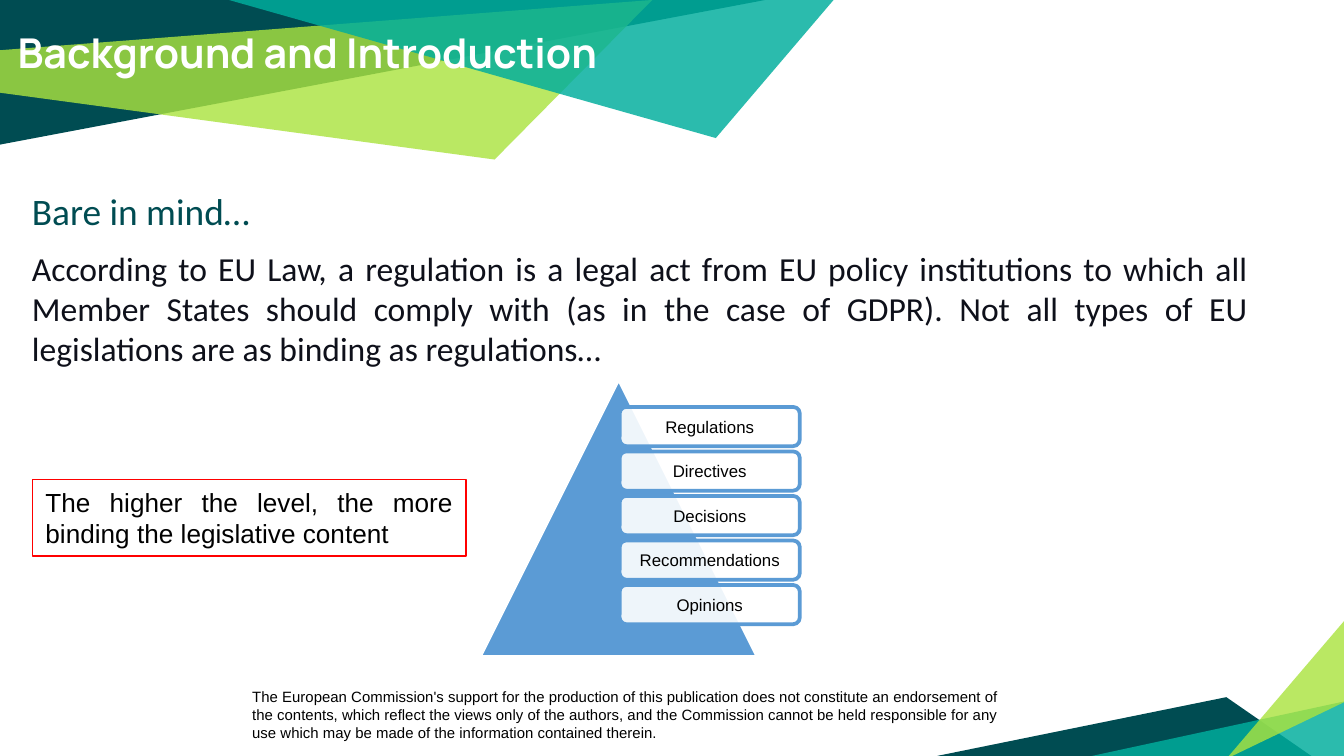
from lxml.etree import SubElement
from pptx import Presentation
from pptx.dml.color import RGBColor
from pptx.enum.shapes import MSO_SHAPE
from pptx.enum.text import MSO_ANCHOR, MSO_AUTO_SIZE, PP_ALIGN
from pptx.oxml.ns import qn
from pptx.util import Pt

COLORS = {
    "white": "FFFFFF",
    "black": "000000",
    "ink": "0E101A",
    "petrol": "004C52",
    "lime": "ABE33F",
    "teal": "00AE9D",
    "blue": "5B9BD5",
    "red": "FF0000",
}


def color(name):
    return RGBColor.from_string(COLORS[name])


class SlideBuilder:
    def __init__(self, slide):
        self.slide = slide
        self.shapes = slide.shapes

    def paint(self, shape, fill=None, opacity=100, line=None, line_width=2):
        shape.shadow.inherit = False
        if fill:
            shape.fill.solid()
            shape.fill.fore_color.rgb = color(fill)
            if opacity < 100:
                solid = shape.element.spPr.find(qn("a:solidFill"))
                SubElement(solid[0], qn("a:alpha"), val=str(opacity * 1000))
        else:
            shape.fill.background()
        if line:
            shape.line.color.rgb = color(line)
            shape.line.width = Pt(line_width)
        else:
            shape.line.fill.background()

    def set_text(self, shape, text, size, font, ink, align=PP_ALIGN.LEFT,
                 anchor=MSO_ANCHOR.TOP, margins=(7.2, 3.6), bold=False):
        frame = shape.text_frame
        frame.text = text
        frame.word_wrap = True
        frame.auto_size = MSO_AUTO_SIZE.NONE
        frame.vertical_anchor = anchor
        frame.margin_left = frame.margin_right = Pt(margins[0])
        frame.margin_top = frame.margin_bottom = Pt(margins[1])
        paragraph = frame.paragraphs[0]
        paragraph.alignment = align
        for run in paragraph.runs:
            run.font.size = Pt(size)
            run.font.name = font
            run.font.bold = bold
            run.font.color.rgb = color(ink)

    def title(self, text, box):
        title = self.shapes.title
        title.left, title.top, title.width, title.height = map(Pt, box)
        self.set_text(title, text, 22, "Manrope", "white",
                      anchor=MSO_ANCHOR.MIDDLE, margins=(7.2, 7.2), bold=True)
        title.element.getparent().append(title.element)

    def text(self, text, box, size, font, ink, **layout):
        shape = self.shapes.add_textbox(*map(Pt, box))
        self.set_text(shape, text, size, font, ink, **layout)

    def shape(self, kind, box, **paint):
        shape = self.shapes.add_shape(kind, *map(Pt, box))
        self.paint(shape, **paint)
        return shape

    def facet(self, points, fill, opacity=100):
        start, *others = [(Pt(x), Pt(y)) for x, y in points]
        builder = self.shapes.build_freeform(*start)
        builder.add_line_segments(others, close=True)
        self.paint(builder.convert_to_shape(), fill, opacity)


FACETS = [
    ([(0, 0), (0, 77.5), (410, 0)], "petrol", 100),
    ([(-0.7, 27), (0, 49.7), (265, 85.5), (349.5, 0)], "lime", 81),
    ([(502, 405), (702.5, 405), (657, 373.5)], "petrol", 100),
    ([(721.5, 375.5), (721.5, 406.5), (578, 406.5)], "teal", 83),
    ([(721.5, 375.5), (721.5, 331), (657, 406.5)], "lime", 81),
    ([(122.5, 0), (383.5, 74), (447, -0.5), (438.5, 0)], "teal", 83),
]
LEVELS = ["Regulations", "Directives", "Decisions", "Recommendations", "Opinions"]
LEVEL_TOP, LEVEL_PITCH = 218, 23.85


def main():
    presentation = Presentation()
    presentation.slide_width, presentation.slide_height = Pt(720), Pt(405)
    slide = presentation.slides.add_slide(presentation.slide_layouts[5])
    builder = SlideBuilder(slide)

    builder.text(
        "The European Commission's support for the production of this publication "
        "does not constitute an endorsement of the contents, which reflect the views "
        "only of the authors, and the Commission cannot be held responsible for any "
        "use which may be made of the information contained therein.",
        (128, 365, 417, 36), 8, "Arial", "black")
    for points, fill, opacity in FACETS:
        builder.facet(points, fill, opacity)
    builder.title("Background and Introduction", (2.2, 6.5, 610, 43))

    builder.text(
        "According to EU Law, a regulation is a legal act from EU policy institutions "
        "to which all Member States should comply with (as in the case of GDPR). "
        "Not all types of EU legislations are as binding as regulations…",
        (10, 129, 666, 111.5), 18, "Calibri", "ink", align=PP_ALIGN.JUSTIFY)
    builder.text("Bare in mind…", (10, 96.5, 499, 32.5), 20, "Calibri", "petrol",
                 anchor=MSO_ANCHOR.MIDDLE, margins=(7.2, 7.2))

    builder.shape(MSO_SHAPE.ISOSCELES_TRIANGLE, (257, 203, 149, 149),
                  fill="blue", line="white")
    for index, level in enumerate(LEVELS):
        label = builder.shape(
            MSO_SHAPE.ROUNDED_RECTANGLE,
            (332, LEVEL_TOP + index * LEVEL_PITCH, 96.5, 21),
            fill="white", opacity=90, line="blue")
        builder.set_text(label, level, 9, "Arial", "black", align=PP_ALIGN.CENTER,
                         anchor=MSO_ANCHOR.MIDDLE, margins=(3, 3))

    remark = builder.shape(MSO_SHAPE.RECTANGLE, (17.3, 257, 232.5, 41),
                           line="red", line_width=0.75)
    builder.set_text(remark, "The higher the level, the more binding the legislative content",
                     14, "Arial", "black", align=PP_ALIGN.JUSTIFY)

    presentation.save("out.pptx")


if __name__ == "__main__":
    main()
